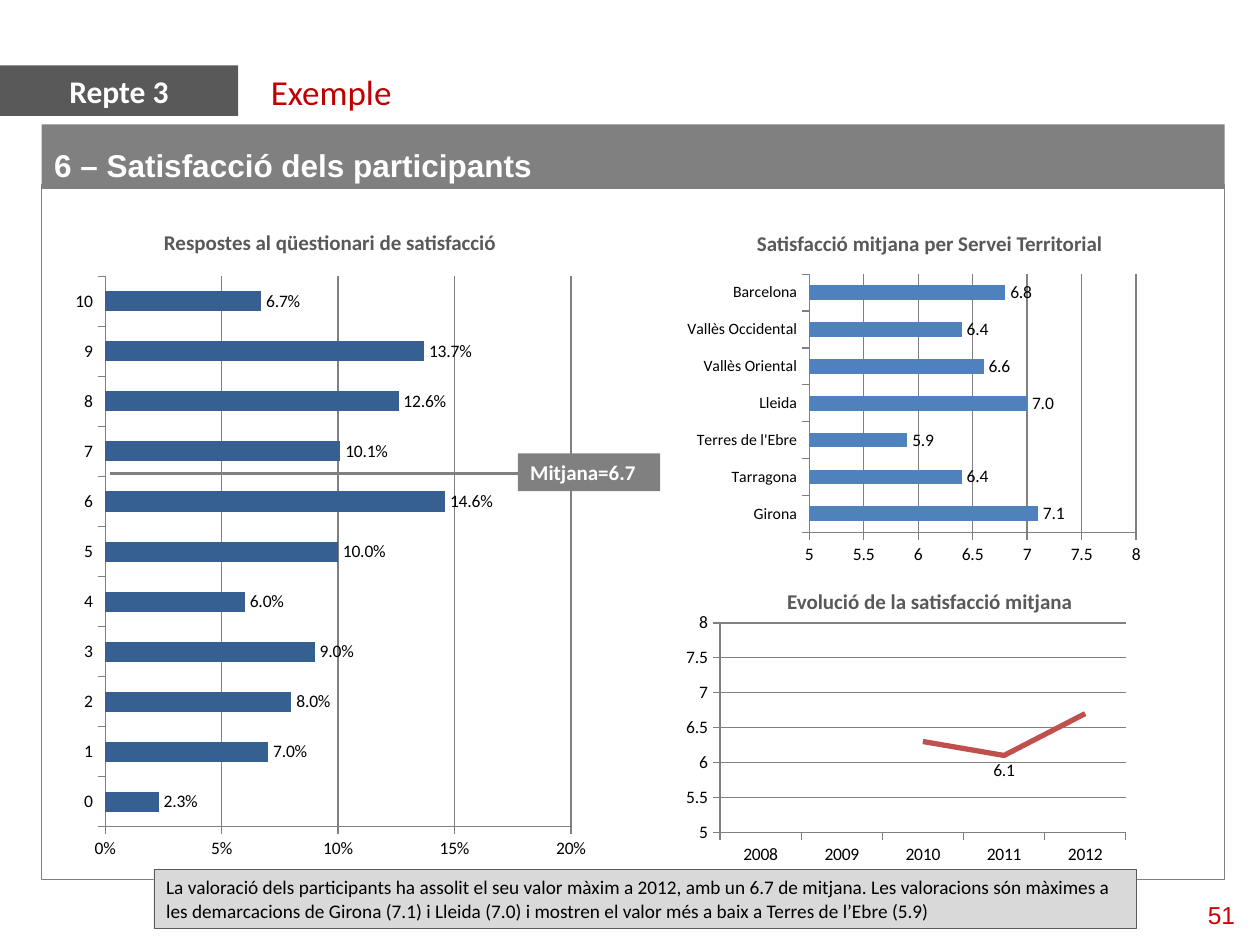
"""Build the participant satisfaction slide with its three charts."""
from lxml import etree
from pptx import Presentation
from pptx.chart.data import CategoryChartData
from pptx.dml.color import RGBColor
from pptx.enum import chart as ch, shapes, text
from pptx.oxml import parse_xml
from pptx.oxml.ns import nsdecls, qn
from pptx.util import Cm, Pt

WHITE = RGBColor(0xFF, 0xFF, 0xFF)
BLACK = RGBColor(0, 0, 0)
GREY = RGBColor(0x80, 0x80, 0x80)
DARK = RGBColor(0x59, 0x59, 0x59)
PALE = RGBColor(0xD9, 0xD9, 0xD9)
RED = RGBColor(0xC0, 0, 0)
PAGE_RED = RGBColor(0xCC, 0, 0)
NAVY = RGBColor(0x37, 0x60, 0x92)
BLUE = RGBColor(0x4F, 0x81, 0xBD)
BRICK = RGBColor(0xC0, 0x50, 0x4D)
BAR, LINE = ch.XL_CHART_TYPE.BAR_CLUSTERED, ch.XL_CHART_TYPE.LINE
CENTER = text.PP_ALIGN.CENTER

prs = Presentation()
prs.slide_width, prs.slide_height = Cm(25.4), Cm(19.05)
slide = prs.slides.add_slide(prs.slide_layouts[6])


def add_box(box, fill=None, edge=None, edge_width=0.75):
    shape = slide.shapes.add_shape(shapes.MSO_SHAPE.RECTANGLE, *map(Cm, box))
    shape.shadow.inherit = False
    if fill is None:
        shape.fill.background()
    else:
        shape.fill.solid()
        shape.fill.fore_color.rgb = fill
    if edge is None:
        shape.line.fill.background()
    else:
        shape.line.color.rgb = edge
        shape.line.width = Pt(edge_width)
    return shape


def write(shape, words, size, color, bold=False, align=text.PP_ALIGN.LEFT, face="Calibri"):
    frame = shape.text_frame
    frame.word_wrap = True
    frame.vertical_anchor = text.MSO_ANCHOR.TOP
    frame.text = words
    paragraph = frame.paragraphs[0]
    paragraph.alignment = align
    font = paragraph.runs[0].font
    font.name, font.size, font.bold = face, Pt(size), bold
    font.color.rgb = color


heading = slide.shapes.add_textbox(Cm(5.21), Cm(1.3), Cm(18.69), Cm(1.02))
write(heading, "Exemple", 20, RED)

band = add_box((0.84, 2.51, 23.85, 1.3), GREY)
write(band, "6 – Satisfacció dels participants", 18, WHITE, True, face="Arial")
band.text_frame.vertical_anchor = text.MSO_ANCHOR.MIDDLE
band.text_frame.margin_top, band.text_frame.margin_bottom = Cm(0.43), Cm(0.1)

add_box((0.84, 3.73, 23.85, 14), edge=GREY)

scores = [str(score) for score in range(11)]
shares = [0.023, 0.07, 0.08, 0.09, 0.06, 0.1, 0.146, 0.101, 0.126, 0.137, 0.067]
regions = ["Girona", "Tarragona", "Terres de l'Ebre", "Lleida", "Vallès Oriental",
           "Vallès Occidental", "Barcelona"]
years = [str(year) for year in range(2008, 2013)]

charts = [
    (BAR, (1.32, 5.33, 10.67, 12.19), (0.075, 0.02, 0.88, 0.91), scores, shares,
     NAVY, (0, 0.2, 0.05), "0%", "0.0%", 10),
    (BAR, (13.64, 5.41, 9.55, 6.12), (0.28, 0.02, 0.69, 0.85), regions,
     [7.1, 6.4, 5.9, 7, 6.6, 6.4, 6.8], BLUE, (5, 8, 0.5), "General", "0.0", 9),
    (LINE, (13.69, 12.24, 9.19, 5.28), (0.09, 0.06, 0.89, 0.8), years,
     [None, None, 6.3, 6.1, 6.7], BRICK, (5, 8, 0.5), "General", "0.0", 10),
]
for kind, box, plot_box, names, values, color, scale, axis_format, label_format, name_size in charts:
    data = CategoryChartData()
    data.categories = names
    data.add_series("Series 1", values)
    chart = slide.shapes.add_chart(kind, *map(Cm, box), data).chart
    chart.has_legend = chart.has_title = False
    chart.font.name, chart.font.size = "Calibri", Pt(10)
    chart.font.color.rgb = BLACK

    plot_area = chart.plots[0]._element.getparent()
    for old in plot_area.findall(qn("c:layout")):
        plot_area.remove(old)
    modes = "".join(f'<c:{edge}Mode val="edge"/>' for edge in "xy")
    sizes = "".join(f'<c:{side} val="{part}"/>' for side, part in zip("xywh", plot_box))
    plot_area.insert(0, parse_xml(
        f'<c:layout {nsdecls("c")}><c:manualLayout><c:layoutTarget val="inner"/>'
        f"{modes}{sizes}</c:manualLayout></c:layout>"))

    value_axis, name_axis = chart.value_axis, chart.category_axis
    value_axis.minimum_scale, value_axis.maximum_scale, value_axis.major_unit = scale
    value_axis.tick_labels.number_format = axis_format
    value_axis.tick_labels.number_format_is_linked = False
    value_axis.has_major_gridlines = True
    value_axis.major_gridlines.format.line.color.rgb = GREY
    name_axis.tick_labels.font.size = Pt(name_size)
    for axis in (value_axis, name_axis):
        axis.major_tick_mark = ch.XL_TICK_MARK.OUTSIDE
        axis.format.line.color.rgb = GREY

    plot = chart.plots[0]
    plot.vary_by_categories = False
    plot.has_data_labels = True
    labels = plot.data_labels
    labels.show_value = True
    labels.number_format, labels.number_format_is_linked = label_format, False
    series = plot.series[0]
    if kind == BAR:
        plot.gap_width = 150
        labels.position = ch.XL_LABEL_POSITION.OUTSIDE_END
        series.format.fill.solid()
        series.format.fill.fore_color.rgb = color
    else:
        labels.position = ch.XL_LABEL_POSITION.ABOVE
        series.points[3].data_label.position = ch.XL_LABEL_POSITION.BELOW
        series.smooth = False
        series.marker.style = ch.XL_MARKER_STYLE.NONE
        series.format.line.color.rgb = color
        series.format.line.width = Pt(3)

mean_line = slide.shapes.add_connector(
    shapes.MSO_CONNECTOR.STRAIGHT, Cm(2.21), Cm(9.55), Cm(11.63), Cm(9.55))
mean_line.line.color.rgb = GREY
mean_line.line.width = Pt(1.5)
etree.SubElement(mean_line._element.spPr, qn("a:effectLst"))
write(add_box((10.44, 9.14, 2.87, 0.76), GREY), "Mitjana=6.7", 12, WHITE, True)

for left, top, title in [
    (2.21, 4.5, "Respostes al qüestionari de satisfacció"),
    (14.3, 4.52, "Satisfacció mitjana per Servei Territorial"),
    (14.3, 11.73, "Evolució de la satisfacció mitjana"),
]:
    chart_title = slide.shapes.add_textbox(Cm(left), Cm(top), Cm(8.89), Cm(1.02))
    write(chart_title, title, 12, DARK, True, CENTER)

write(add_box((0, 1.32, 4.8, 1.02), DARK), "Repte 3", 18, WHITE, True, CENTER)

conclusion = (
    "La valoració dels participants ha assolit el seu valor màxim a 2012, amb un 6.7 de mitjana. "
    "Les valoracions són màximes a les demarcacions de Girona (7.1) i Lleida (7.0) "
    "i mostren el valor més a baix a Terres de l’Ebre (5.9)")
write(add_box((3.1, 17.53, 19.81, 1.19), PALE, DARK, 0.25), conclusion, 11, BLACK)

page_number = slide.shapes.add_textbox(Cm(24.1), Cm(18.01), Cm(1.3), Cm(0.86))
write(page_number, "51", 14, PAGE_RED, face="Arial")

prs.save("out.pptx")
